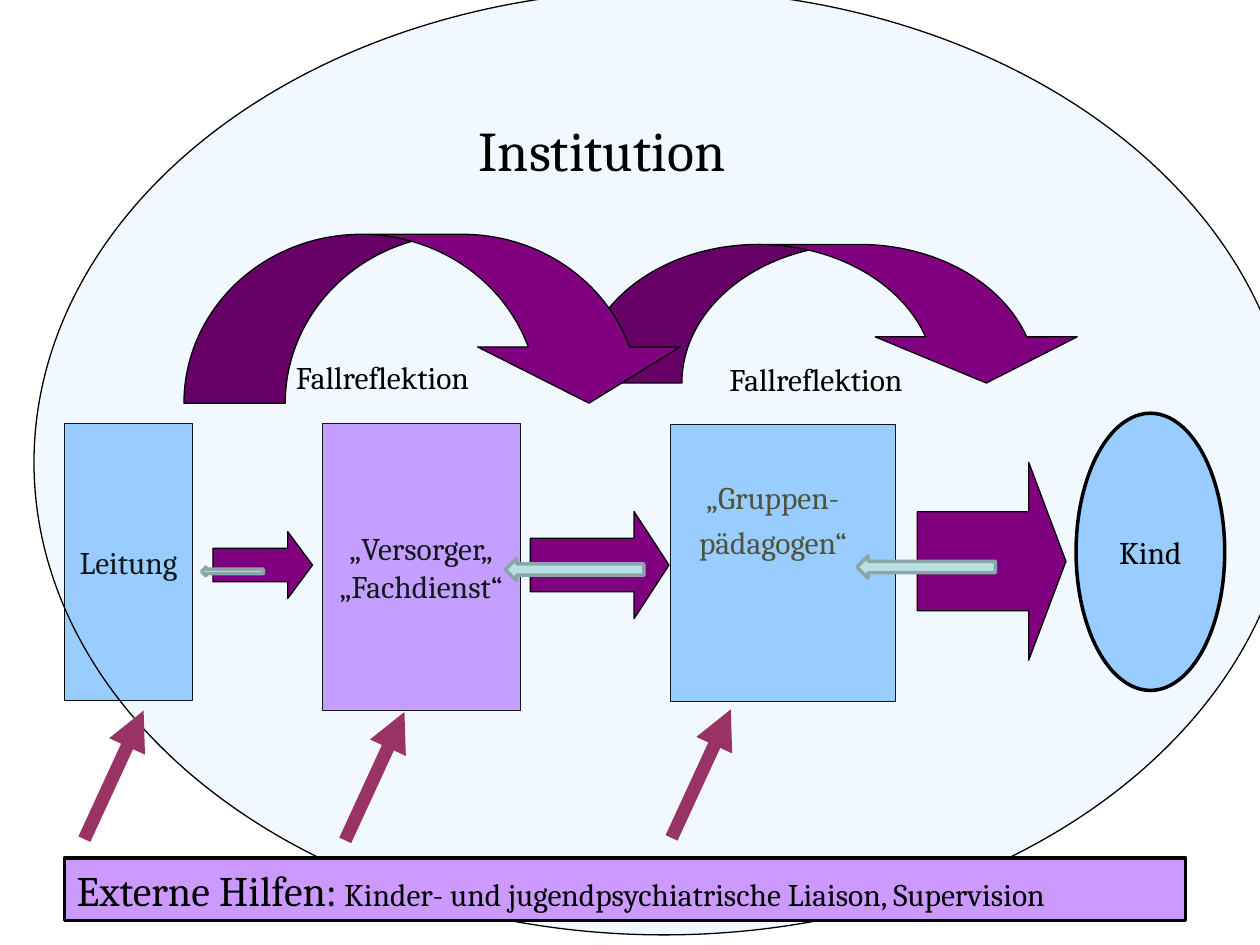
import dataclasses

import lxml.etree
import pptx
import pptx.dml.color
import pptx.enum.shapes
import pptx.enum.text
import pptx.oxml.ns
import pptx.util

Inches, Pt = pptx.util.Inches, pptx.util.Pt
Color = pptx.dml.color.RGBColor.from_string
Kind = pptx.enum.shapes.MSO_SHAPE
Align = pptx.enum.text.PP_ALIGN
Anchor = pptx.enum.text.MSO_ANCHOR
qn = pptx.oxml.ns.qn


@dataclasses.dataclass(frozen=True)
class Theme:
    font: str = "Cambria"
    black: str = "000000"
    olive: str = "444424"
    blue: str = "99CCFF"
    lilac: str = "CC99FF"
    purple: str = "800080"
    plum: str = "993366"
    pale: str = "BBE0E3"
    pale_edge: str = "8AA6A8"
    title: int = 32
    heading: int = 24
    body: int = 18


theme = Theme()
deck = pptx.Presentation()
deck.slide_width, deck.slide_height = Inches(10), Inches(7.5)
slide = deck.slides.add_slide(deck.slide_layouts[6])


def add_shape(kind, place, fill, line=theme.black, width=0.75, adjust=(), rotation=0):
    shape = slide.shapes.add_shape(kind, *map(Inches, place))
    shape.shadow.inherit = False
    shape.fill.solid()
    shape.fill.fore_color.rgb = Color(fill)
    shape.line.color.rgb = Color(line)
    shape.line.width = Pt(width)
    shape.rotation = rotation
    for index, value in enumerate(adjust):
        shape.adjustments[index] = value
    return shape


def write_text(shape, *lines, color=theme.black, align=Align.CENTER,
               anchor=Anchor.MIDDLE, wrap=False, spacing=None):
    """Fill a shape; each line is a list of (wording, size) spans."""
    frame = shape.text_frame
    frame.word_wrap = wrap
    frame.vertical_anchor = anchor
    for index, line in enumerate(lines):
        para = frame.paragraphs[0] if index == 0 else frame.add_paragraph()
        para.alignment = align
        para.line_spacing = spacing
        for wording, size in line:
            span = para.add_run()
            span.text = wording
            span.font.name = theme.font
            span.font.size = Pt(size)
            span.font.color.rgb = Color(color)
    return frame


# Stations beneath the institution
educators = add_shape(Kind.RECTANGLE, (5.32, 3.37, 1.79, 2.2), theme.blue)
frame = write_text(educators, [("„Gruppen-", theme.body)], [("pädagogen“", theme.body)],
                   color=theme.olive, anchor=Anchor.TOP, wrap=True, spacing=Pt(26))
frame.margin_left = frame.margin_bottom = 0
frame.margin_top, frame.margin_right = Inches(0.36), Inches(0.16)

providers = add_shape(Kind.RECTANGLE, (2.56, 3.36, 1.57, 2.28), theme.lilac)
write_text(providers, [("„Versorger„", theme.body)], [("„Fachdienst“", theme.body)])
management = add_shape(Kind.RECTANGLE, (0.51, 3.36, 1.02, 2.2), theme.blue)
write_text(management, [("Leitung", theme.body)])

# Translucent institution laid over the stations
institution = add_shape(Kind.OVAL, (0.27, -0.08, 10, 7.5), theme.blue)
fill_color = institution.fill._xPr.find(qn("a:solidFill"))[0]
lxml.etree.SubElement(fill_color, qn("a:alpha"), val="12000")
title = slide.shapes.add_textbox(*map(Inches, (3.7, 0.57, 2.36, 0.93)))
write_text(title, [("Institution", theme.title)], align=Align.LEFT,
           anchor=Anchor.BOTTOM, wrap=True)

# Purple arrows towards the child
for kind, place, adjust in (
    (Kind.CURVED_DOWN_ARROW, (4.61, 1.94, 4.02, 1.1), (0.729, 1.458, 0.333)),
    (Kind.RIGHT_ARROW, (7.28, 3.67, 1.18, 1.57), (0.5, 0.25)),
    (Kind.RIGHT_ARROW, (4.21, 4.06, 1.1, 0.85), (0.5, 0.326)),
    (Kind.RIGHT_ARROW, (1.69, 4.22, 0.79, 0.53), (0.5, 0.371)),
    (Kind.CURVED_DOWN_ARROW, (1.46, 1.86, 4.02, 1.34), (0.6, 1.201, 0.333)),
):
    add_shape(kind, place, theme.purple, adjust=adjust)

external_help = add_shape(Kind.RECTANGLE, (0.51, 6.81, 8.9, 0.5), theme.lilac, width=1.75)
write_text(external_help, [
    ("Externe Hilfen:", theme.heading),
    (" Kinder- und jugendpsychiatrische Liaison, Supervision", theme.body),
], align=Align.LEFT, anchor=Anchor.TOP, wrap=True)

child = add_shape(Kind.OVAL, (8.54, 3.28, 1.18, 2.2), theme.blue, width=2)
write_text(child, [("Kind", theme.body)])

for left, top in ((2.25, 2.79), (5.69, 2.81)):
    label = slide.shapes.add_textbox(*map(Inches, (left, top, 1.69, 0.4)))
    write_text(label, [("Fallreflektion", theme.body)], align=Align.LEFT, anchor=Anchor.TOP)

# Feedback arrows pointing back
for place in ((6.8, 4.41, 1.1, 0.18), (4.01, 4.43, 1.1, 0.18), (1.6, 4.5, 0.49, 0.07)):
    add_shape(Kind.RIGHT_ARROW, place, theme.pale, line=theme.pale_edge, width=2, rotation=180)

# Arrows from external help to the stations
for left, bottom in ((0.67, 6.66), (2.74, 6.67), (5.33, 6.65)):
    arrow = slide.shapes.add_connector(
        pptx.enum.shapes.MSO_CONNECTOR.STRAIGHT,
        *map(Inches, (left, bottom, left + 0.47, bottom - 1.02)))
    arrow.line.color.rgb = Color(theme.plum)
    arrow.line.width = Pt(7.5)
    lxml.etree.SubElement(arrow.line._get_or_add_ln(), qn("a:tailEnd"), type="triangle")
    lxml.etree.SubElement(arrow._element.spPr, qn("a:effectLst"))

deck.save("out.pptx")
